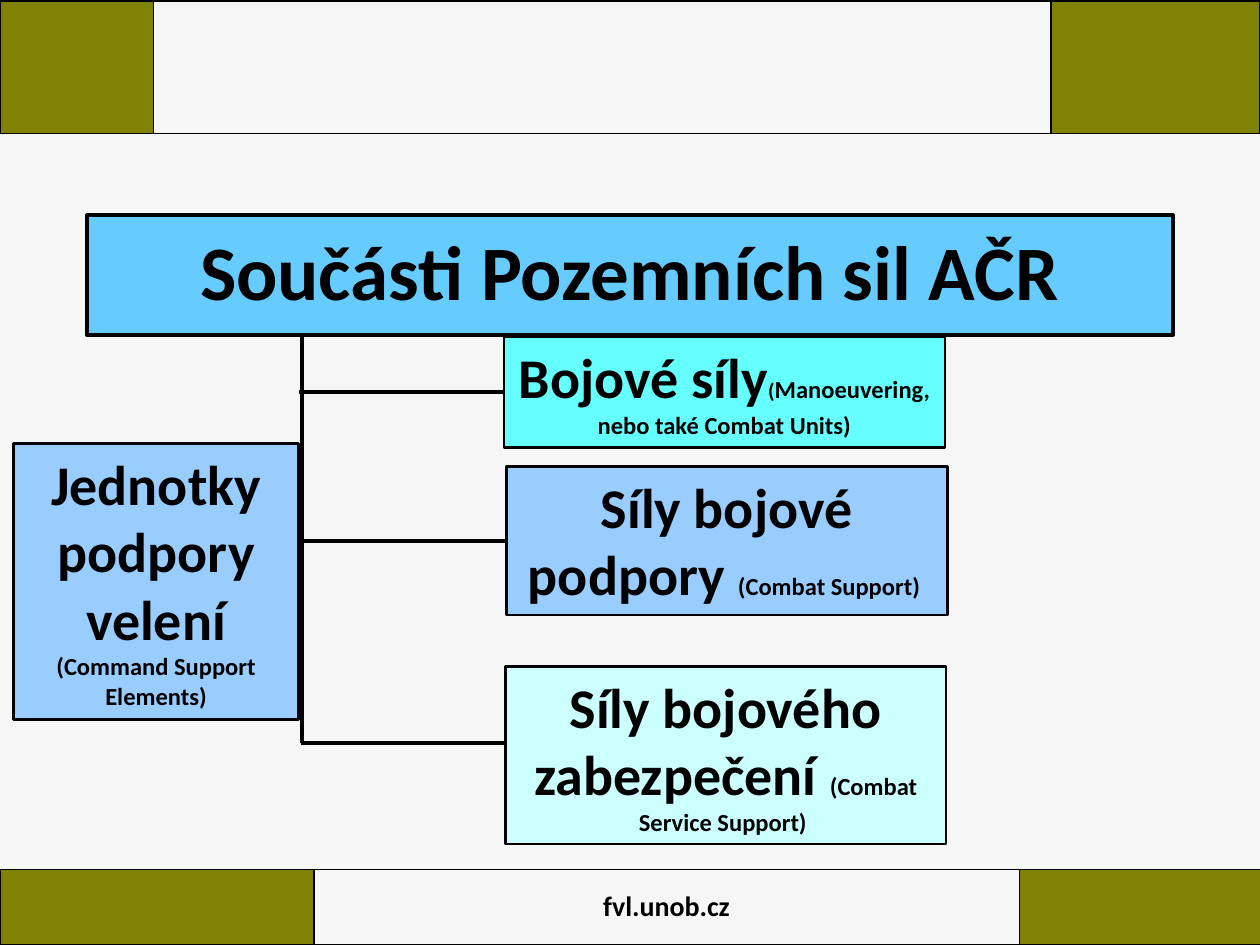
from lxml import etree
from pptx import Presentation
from pptx.dml.color import RGBColor
from pptx.enum import shapes, text
from pptx.oxml import ns
from pptx.util import Pt

FONT = "Calibri"
BLACK, OLIVE, PAPER = "000000", "808206", "F6F6F6"
SKY, AQUA, BLUE, MINT = "66CCFF", "66FFFF", "99CCFF", "CCFFFF"


def colour(value):
    return RGBColor.from_string(value)


def write(frame, runs, line_spacing=None, anchor=text.MSO_ANCHOR.TOP):
    """Fill a text frame with one centred bold paragraph of (wording, size) runs."""
    frame.word_wrap = True
    frame.vertical_anchor = anchor
    paragraph = frame.paragraphs[0]
    paragraph.alignment = text.PP_ALIGN.CENTER
    if line_spacing:
        paragraph.line_spacing = line_spacing
    for wording, size in runs:
        run = paragraph.add_run()
        run.text = wording
        run.font.name, run.font.size, run.font.bold = FONT, Pt(size), True
        run.font.color.rgb = colour(BLACK)


def paint(shape, fill, line_width):
    shape.fill.solid()
    shape.fill.fore_color.rgb = colour(fill)
    shape.line.color.rgb = colour(BLACK)
    shape.line.width = Pt(line_width)


def border_cell(cell):
    properties = cell._tc.get_or_add_tcPr()
    for position, side in enumerate(("a:lnL", "a:lnR", "a:lnT", "a:lnB")):
        line = etree.Element(ns.qn(side), w=str(Pt(1)))
        fill = etree.SubElement(line, ns.qn("a:solidFill"))
        etree.SubElement(fill, ns.qn("a:srgbClr"), val=BLACK)
        properties.insert(position, line)


def add_band(slide, left, top, height, widths, caption=None):
    """Add a one-row table with olive ends and an open middle cell."""
    table = slide.shapes.add_table(
        1, len(widths), Pt(left), Pt(top), Pt(sum(widths)), Pt(height)).table
    table.first_row = table.horz_banding = False
    table.rows[0].height = Pt(height)
    for index, width in enumerate(widths):
        table.columns[index].width = Pt(width)
        cell = table.cell(0, index)
        if index == 1:
            cell.fill.background()
        else:
            cell.fill.solid()
            cell.fill.fore_color.rgb = colour(OLIVE)
        border_cell(cell)
    if caption:
        middle = table.cell(0, 1)
        write(middle.text_frame, [(caption, 16)])
        middle.vertical_anchor = text.MSO_ANCHOR.MIDDLE


def set_title(slide, left, top, width, height, wording):
    title = slide.shapes.title
    title.left, title.top = Pt(left), Pt(top)
    title.width, title.height = Pt(width), Pt(height)
    paint(title, SKY, 2.25)
    title.text_frame.auto_size = text.MSO_AUTO_SIZE.NONE
    write(title.text_frame, [(wording, 44)], 0.9, text.MSO_ANCHOR.MIDDLE)


def add_unit(slide, left, top, width, height, fill, runs):
    shape = slide.shapes.add_shape(
        shapes.MSO_SHAPE.RECTANGLE, Pt(left), Pt(top), Pt(width), Pt(height))
    shape.shadow.inherit = False
    paint(shape, fill, 1.5)
    write(shape.text_frame, runs)
    shape.text_frame.auto_size = text.MSO_AUTO_SIZE.SHAPE_TO_FIT_TEXT
    return shape


def add_line(slide, start_x, start_y, end_x, end_y):
    """Add a black connector between two points given as lengths."""
    line = slide.shapes.add_connector(
        shapes.MSO_CONNECTOR.STRAIGHT, start_x, start_y, end_x, end_y)
    line.line.color.rgb = colour(BLACK)
    line.line.width = Pt(2.25)
    etree.SubElement(line._element.spPr, ns.qn("a:effectLst"))
    return line


def add_tree(slide, trunk_x, top, bottom):
    """Add the forces on the right, the trunk and its branches."""
    forces = [
        (288, 192.2, 63.4, AQUA,
         [("Bojové síly", 32), ("(", 12), ("Manoeuvering, nebo také Combat Units)", 14)]),
        (289.4, 266.4, 85, BLUE,
         [("Síly bojové podpory ", 32), ("(Combat Support) ", 14)]),
        (288.7, 380.9, 101.5, MINT,
         [("Síly bojového zabezpečení ", 32), ("(Combat Service Support) ", 14)]),
    ]
    units = [add_unit(slide, left, y, 252, height, fill, runs)
             for left, y, height, fill, runs in forces]
    add_line(slide, Pt(trunk_x), Pt(top), Pt(trunk_x), Pt(bottom))
    for unit in units[:-1]:
        middle = unit.top + unit.height // 2
        branch = add_line(slide, unit.left, middle, Pt(trunk_x - 2), middle)
        branch.begin_connect(unit, 1)
    add_line(slide, units[-1].left, Pt(bottom), Pt(trunk_x - 1), Pt(bottom))


def main():
    presentation = Presentation()
    presentation.slide_width, presentation.slide_height = Pt(720), Pt(540)
    slide = presentation.slides.add_slide(presentation.slide_layouts[5])
    slide.background.fill.solid()
    slide.background.fill.fore_color.rgb = colour(PAPER)

    add_band(slide, 0, 496.8, 43.2, (179.3, 403.2, 138.2), "fvl.unob.cz")
    add_band(slide, 0, 0.7, 75.6, (87.8, 512.7, 119.5))
    set_title(slide, 49.7, 123.1, 620.6, 68.4, "Součásti Pozemních sil AČR")
    add_tree(slide, 172.8, 192.2, 424.8)
    add_unit(slide, 7.9, 253.4, 162.7, 157.7, BLUE,
             [("Jednotky podpory velení ", 32), ("(Command Support Elements)", 14)])
    presentation.save("out.pptx")


if __name__ == "__main__":
    main()
